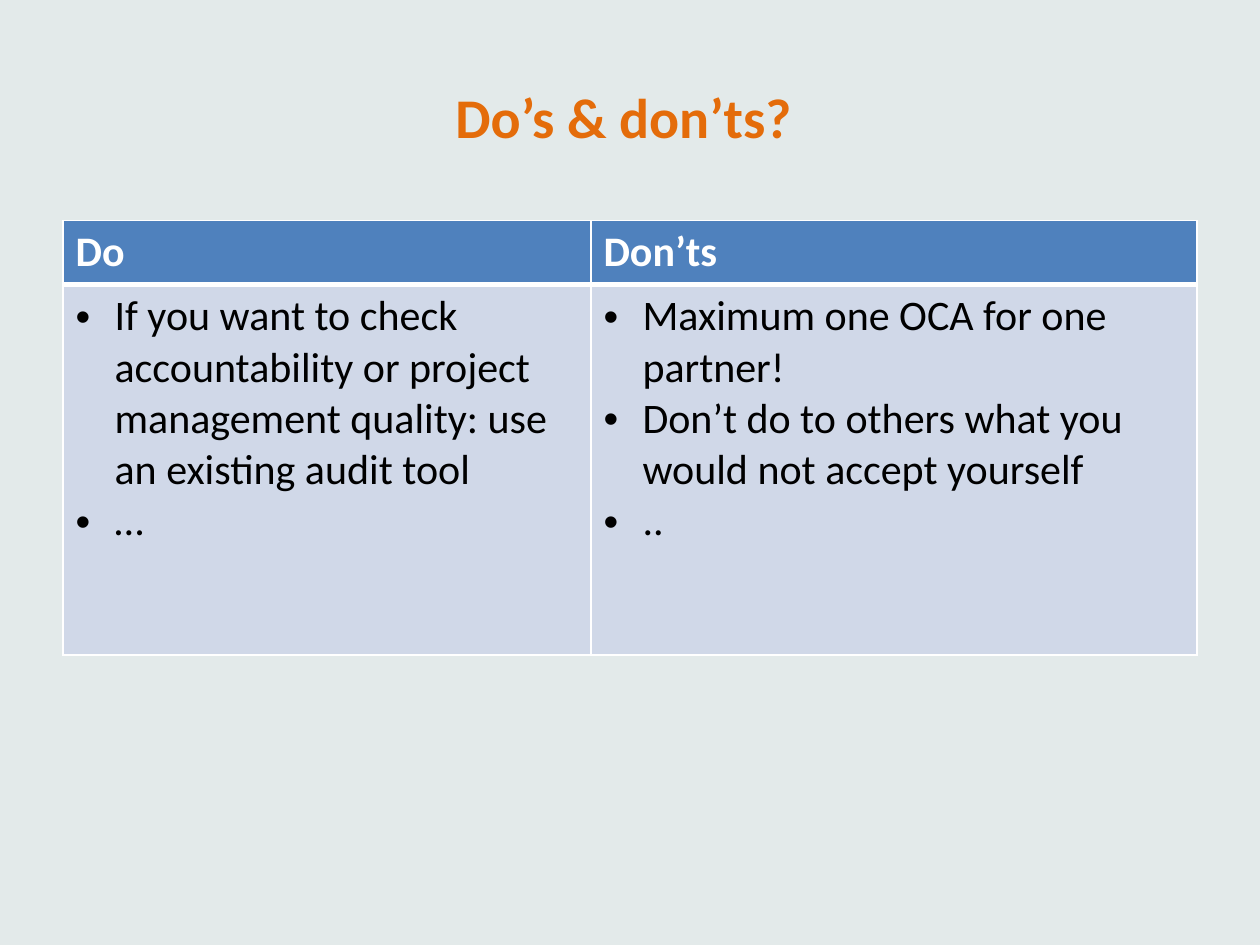
from lxml import etree
from pptx import Presentation
from pptx.dml.color import RGBColor
from pptx.enum.text import MSO_ANCHOR, PP_ALIGN
from pptx.oxml.ns import qn
from pptx.util import Inches, Pt

CENTER, MIDDLE = PP_ALIGN.CENTER, MSO_ANCHOR.MIDDLE

# Content
TITLE = "Do’s & don’ts? "
ADVICE = [
    ("Do", [
        "If you want to check accountability or project management quality: "
        "use an existing audit tool",
        "…",
    ]),
    ("Don’ts", [
        "Maximum one OCA for one partner!",
        "Don’t do to others what you would not accept yourself",
        "..",
    ]),
]

# Style
FONT = "Calibri"
COLORS = {"background": "E3EAEA", "title": "E46C0A", "header": "4F81BD",
          "body": "D0D8E8", "white": "FFFFFF", "black": "000000"}
THIN, THICK = 1, 3
INDENT = Inches(0.31)

# Layout
WIDTH, HEIGHT = Inches(10), Inches(7.5)
MARGIN = int(WIDTH * 0.05)
CONTENT_WIDTH = WIDTH - 2 * MARGIN
COLUMN_WIDTHS = [Inches(4.19), Inches(4.81)]
ROW_HEIGHTS = [Inches(0.51), Inches(2.94)]


def rgb(name):
    return RGBColor.from_string(COLORS[name])


def format_runs(text_frame, size, color, bold):
    for paragraph in text_frame.paragraphs:
        for run in paragraph.runs:
            font = run.font
            font.name, font.size, font.bold = FONT, Pt(size), bold
            font.color.rgb = rgb(color)


def add_borders(cell, top, bottom):
    properties = cell._tc.get_or_add_tcPr()
    edges = [("a:lnL", THIN), ("a:lnR", THIN), ("a:lnT", top), ("a:lnB", bottom)]
    for position, (tag, points) in enumerate(edges):
        line = etree.Element(qn(tag), w=str(Pt(points)))
        fill = etree.SubElement(line, qn("a:solidFill"))
        etree.SubElement(fill, qn("a:srgbClr"), val=COLORS["white"])
        properties.insert(position, line)


def add_bullet(paragraph):
    properties = paragraph._p.get_or_add_pPr()
    properties.set("marL", str(INDENT))
    properties.set("indent", str(-INDENT))
    etree.SubElement(properties, qn("a:buFont"), typeface="Arial")
    etree.SubElement(properties, qn("a:buChar"), char="•")


def fill_cell(cell, lines, fill, color, bold, top, bottom):
    cell.text_frame.text = "\n".join(lines)
    format_runs(cell.text_frame, 24, color, bold)
    cell.fill.solid()
    cell.fill.fore_color.rgb = rgb(fill)
    add_borders(cell, top, bottom)


def main():
    deck = Presentation()
    deck.slide_width, deck.slide_height = WIDTH, HEIGHT
    slide = deck.slides.add_slide(deck.slide_layouts[5])
    slide.background.fill.solid()
    slide.background.fill.fore_color.rgb = rgb("background")

    # Title
    title = slide.shapes.title
    title.left, title.top = MARGIN, Inches(0.3)
    title.width, title.height = CONTENT_WIDTH, Inches(1.25)
    title.text_frame.text = TITLE
    title.text_frame.vertical_anchor = MIDDLE
    title.text_frame.paragraphs[0].alignment = CENTER
    format_runs(title.text_frame, 32, "title", True)

    # Table of advice
    table = slide.shapes.add_table(
        len(ROW_HEIGHTS), len(ADVICE), MARGIN, Inches(1.75),
        CONTENT_WIDTH, sum(ROW_HEIGHTS)).table
    for row, height in zip(table.rows, ROW_HEIGHTS):
        row.height = height
    for index, (heading, points) in enumerate(ADVICE):
        table.columns[index].width = COLUMN_WIDTHS[index]
        fill_cell(table.cell(0, index), [heading], "header", "white", True,
                  THIN, THICK)
        body = table.cell(1, index)
        fill_cell(body, points, "body", "black", False, THICK, THIN)
        for paragraph in body.text_frame.paragraphs:
            add_bullet(paragraph)

    deck.save("out.pptx")


if __name__ == "__main__":
    main()
